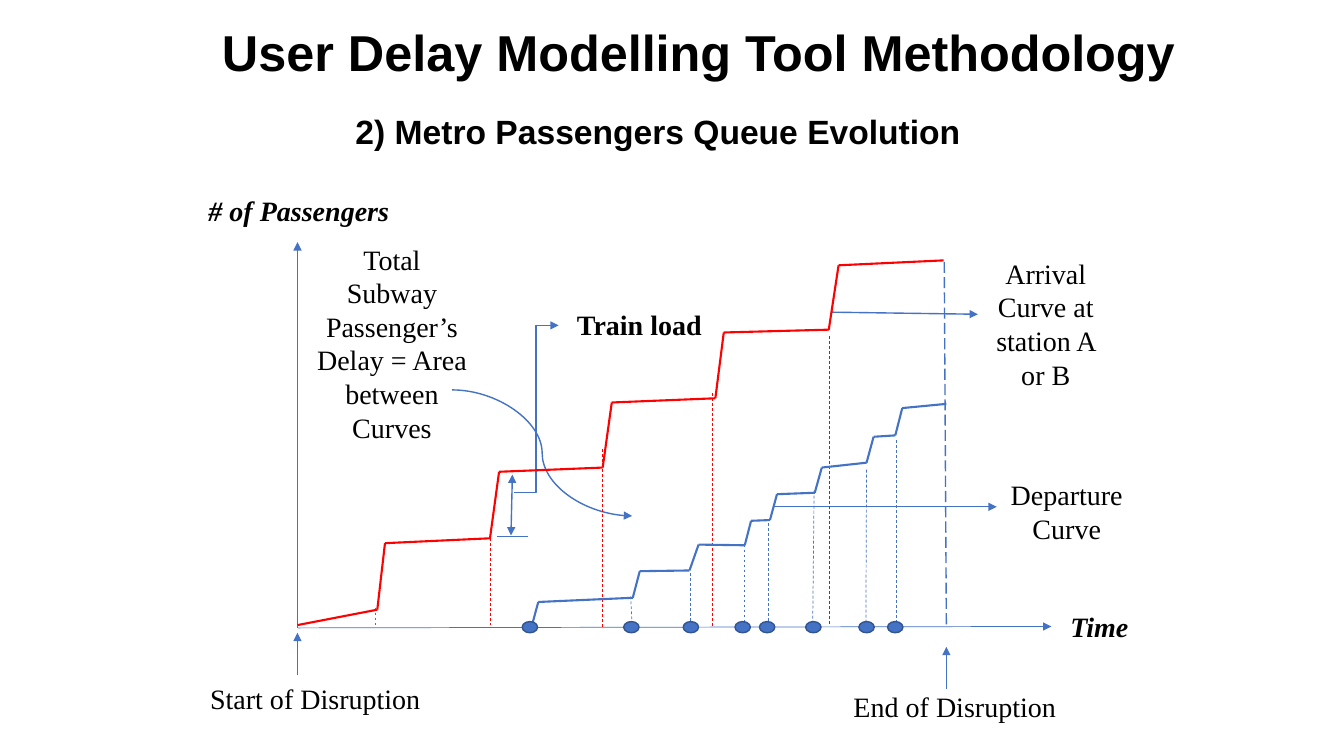
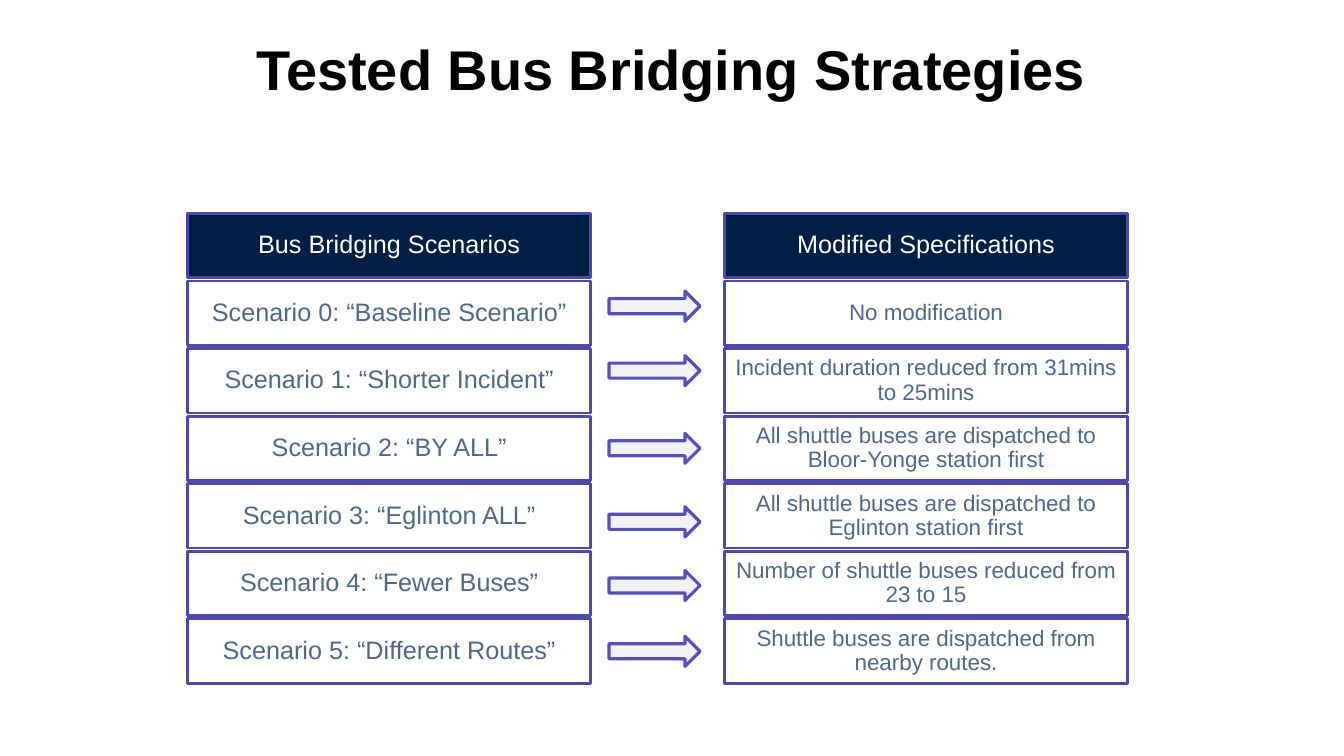
from dataclasses import dataclass
from itertools import pairwise

from lxml import etree
from pptx import Presentation
from pptx.dml.color import RGBColor
from pptx.enum.dml import MSO_LINE
from pptx.enum.shapes import MSO_CONNECTOR, MSO_SHAPE
from pptx.enum.text import MSO_ANCHOR, MSO_AUTO_SIZE, PP_ALIGN
from pptx.oxml.ns import qn
from pptx.util import Pt

STRAIGHT, ELBOW, CURVE = MSO_CONNECTOR.STRAIGHT, MSO_CONNECTOR.ELBOW, MSO_CONNECTOR.CURVE
RECT, ROUNDED = MSO_SHAPE.RECTANGLE, MSO_SHAPE.ROUNDED_RECTANGLE
OVAL, ARROW = MSO_SHAPE.OVAL, MSO_SHAPE.RIGHT_ARROW
DASH, LONG_DASH = MSO_LINE.DASH, MSO_LINE.LONG_DASH
MIDDLE, CENTER, NO_FIT = MSO_ANCHOR.MIDDLE, PP_ALIGN.CENTER, MSO_AUTO_SIZE.NONE


@dataclass(frozen=True)
class Theme:
    sans: str = "Arial"
    serif: str = "Times New Roman"
    black: str = "000000"
    white: str = "FFFFFF"
    blue: str = "4472C4"
    blue_edge: str = "325491"
    red: str = "FF0000"
    navy: str = "001F45"
    slate: str = "4C698D"
    violet: str = "4E47B0"
    arrow_edge: str = "564EC2"
    arrow_fill: str = "F2F2F2"
    title: int = 40
    long_title: int = 36
    subtitle: int = 24
    label: int = 20
    cell: int = 18
    detail: int = 16
    thin: float = 0.5
    medium: float = 1
    thick: float = 1.5


T = Theme()


def style(sp, text="", size=T.label, font=T.sans, color=T.black, bold=False,
          italic=False, spacing=1, inset=None, fill=None, line=None, weight=1):
    sp.shadow.inherit = False
    if fill:
        sp.fill.solid()
        sp.fill.fore_color.rgb = RGBColor.from_string(fill)
    else:
        sp.fill.background()
    if line:
        sp.line.color.rgb = RGBColor.from_string(line)
        sp.line.width = Pt(weight)
    else:
        sp.line.fill.background()
    if not text:
        return
    tf = sp.text_frame
    tf.word_wrap = True
    tf.auto_size = NO_FIT
    tf.vertical_anchor = MIDDLE
    if inset is not None:
        tf.margin_left = tf.margin_right = tf.margin_top = tf.margin_bottom = Pt(inset)
    p = tf.paragraphs[0]
    p.alignment = CENTER
    p.line_spacing = spacing
    r = p.add_run()
    r.text = text
    r.font.name = font
    r.font.size = Pt(size)
    r.font.bold = bold
    r.font.italic = italic
    r.font.color.rgb = RGBColor.from_string(color)


def connect(s, start, end, color=T.blue, weight=T.medium, kind=STRAIGHT, dash=None, heads=()):
    cx = s.shapes.add_connector(kind, *map(Pt, start + end))
    cx.line.color.rgb = RGBColor.from_string(color)
    cx.line.width = Pt(weight)
    if dash:
        cx.line.dash_style = dash
    ln = cx.line._get_or_add_ln()
    for head in heads:
        etree.SubElement(ln, qn(f"a:{head}")).set("type", "triangle")
    etree.SubElement(cx._element.spPr, qn("a:effectLst"))
    return cx


prs = Presentation()
prs.slide_width, prs.slide_height = Pt(960), Pt(540)

slides = []
for text, size, spacing, (x, y, w, h) in [
    ("User Delay Modelling Tool Methodology", T.long_title, 1, (149, 11.5, 700.5, 51)),
    ("Tested Bus Bridging Strategies", T.title, 0.9, (65, -0.5, 828, 104)),
]:
    s = prs.slides.add_slide(prs.slide_layouts[5])
    sp = s.shapes.title
    sp.left, sp.top, sp.width, sp.height = Pt(x), Pt(y), Pt(w), Pt(h)
    style(sp, text, size=size, bold=True, spacing=spacing)
    slides.append(s)
queue, strategies = slides

s = queue
sp = s.shapes.add_textbox(Pt(234.5), Pt(75.5), Pt(471), Pt(36))
style(sp, "2) Metro Passengers Queue Evolution", size=T.subtitle, bold=True)

labels = {}
for text, at, bold, italic, fill in [
    ("Total Subway Passenger’s Delay = Area between Curves", (211.5, 157.5, 137, 175), False, False, T.white),
    ("Train load", (389, 209.5, 135.5, 44.5), True, False, T.white),
    ("Departure Curve", (704, 317.5, 116, 95), False, False, T.white),
    ("# of Passengers", (101.5, 124, 224, 53), True, True, None),
    ("Time", (751, 425.5, 68.5, 44), True, True, T.white),
    ("Start of Disruption", (123, 463.5, 204.5, 70.5), False, False, T.white),
    ("Arrival Curve at station A or B", (692, 170.5, 110, 121), False, False, T.white),
    ("End of Disruption", (579, 469.5, 206, 70.5), False, False, T.white),
]:
    sp = s.shapes.add_shape(ROUNDED, *map(Pt, at))
    style(sp, text, font=T.serif, bold=bold, italic=italic, fill=fill)
    labels[text] = sp

TAIL = ("tailEnd",)
time_axis = connect(s, (213, 448.5), (751, 447.5), weight=T.thin, heads=TAIL)
time_axis.end_connect(labels["Time"], 1)

for start, end, weight, kind, heads in [
    ((212.5, 448.5), (212.5, 173), T.medium, STRAIGHT, TAIL),
    ((212.5, 482.5), (212.5, 452), T.thin, STRAIGHT, TAIL),
    ((676, 492.5), (676, 462), T.thin, STRAIGHT, TAIL),
    ((552, 362), (712, 362), T.thin, STRAIGHT, TAIL),
    ((594, 223), (698.5, 224.5), T.medium, STRAIGHT, TAIL),
    ((377.5, 383), (355, 383), T.thin, STRAIGHT, ()),
    ((366, 339), (365, 382.5), T.medium, STRAIGHT, ("headEnd", "tailEnd")),
    ((367, 352), (399, 232.5), T.medium, ELBOW, TAIL),
    ((323, 278.5), (451.5, 368.5), T.medium, CURVE, TAIL),
]:
    connect(s, start, end, weight=weight, kind=kind, heads=heads)

for start, end, color in [
    ((268, 434), (268, 448), T.blue),
    ((350, 384.5), (350, 446.5), T.red),
    ((430.5, 321), (430.5, 448.5), T.red),
    ((509, 281), (509, 448), T.red),
    ((592.5, 240), (592.5, 445.5), T.red),
    ((450.5, 426), (451.5, 447), T.blue),
    ((493, 409.5), (493, 450.5), T.blue),
    ((531.5, 389), (531.5, 448.5), T.blue),
    ((548.5, 373.5), (548.5, 445.5), T.blue),
    ((581.5, 350.5), (580.5, 450), T.blue),
    ((619, 335.5), (618.5, 447), T.blue),
    ((640, 314.5), (640, 445.5), T.blue),
]:
    connect(s, start, end, color=color, weight=T.thin, dash=DASH)
connect(s, (674.5, 187), (676, 448.5), dash=LONG_DASH)

arrival = [
    (212.5, 446.5), (269.5, 435.5), (275, 388), (350, 384.5), (356.5, 337), (430.5, 334),
    (437, 287.5), (511, 284.5), (517, 237.5), (592, 235.5), (599, 189.5), (674, 186),
]
departure = [
    (379.5, 448.5), (384.5, 430), (452, 427), (457, 408), (492.5, 407.5), (499, 389),
    (532, 389.5), (536.5, 372), (550, 371.5), (555, 353), (582, 352), (587, 334),
    (619, 330.5), (624, 312), (639.5, 311), (644.5, 291.5), (676, 288.5),
]
for curve, color in [(arrival, T.red), (departure, T.blue)]:
    for start, end in pairwise(curve):
        connect(s, start, end, color=color, weight=T.thick)

for x in (378.5, 451, 493.5, 530.5, 548, 581, 619, 639.5):
    sp = s.shapes.add_shape(OVAL, Pt(x - 5.5), Pt(444), Pt(11), Pt(8))
    style(sp, fill=T.blue, line=T.blue_edge)

s = strategies
columns = [
    (134, T.cell, 3.6, [
        "Bus Bridging Scenarios",
        "Scenario 0: “Baseline Scenario”",
        "Scenario 1: “Shorter Incident”",
        "Scenario 2: “BY ALL”",
        "Scenario 3: “Eglinton ALL”",
        "Scenario 4: “Fewer Buses”",
        "Scenario 5: “Different Routes”",
    ]),
    (517.5, T.detail, 2.9, [
        "Modified Specifications",
        "No modification",
        "Incident duration reduced from 31mins to 25mins",
        "All shuttle buses are dispatched to Bloor-Yonge station first",
        "All shuttle buses are dispatched to Eglinton station first",
        "Number of shuttle buses reduced from 23 to 15",
        "Shuttle buses are dispatched from nearby routes.",
    ]),
]
for x, size, inset, texts in columns:
    for row, text in enumerate(texts):
        header = row == 0
        sp = s.shapes.add_shape(RECT, Pt(x), Pt(152.5 + 48.25 * row), Pt(288), Pt(46))
        style(sp, text, size=T.cell if header else size,
              color=T.white if header else T.slate, spacing=0.9, inset=inset,
              fill=T.navy if header else T.white, line=T.violet, weight=2)

for y in (208, 254, 309.5, 362, 407.5, 454.5):
    sp = s.shapes.add_shape(ARROW, Pt(435), Pt(y), Pt(65), Pt(21.5))
    style(sp, fill=T.arrow_fill, line=T.arrow_edge, weight=2.25)

prs.save("out.pptx")
